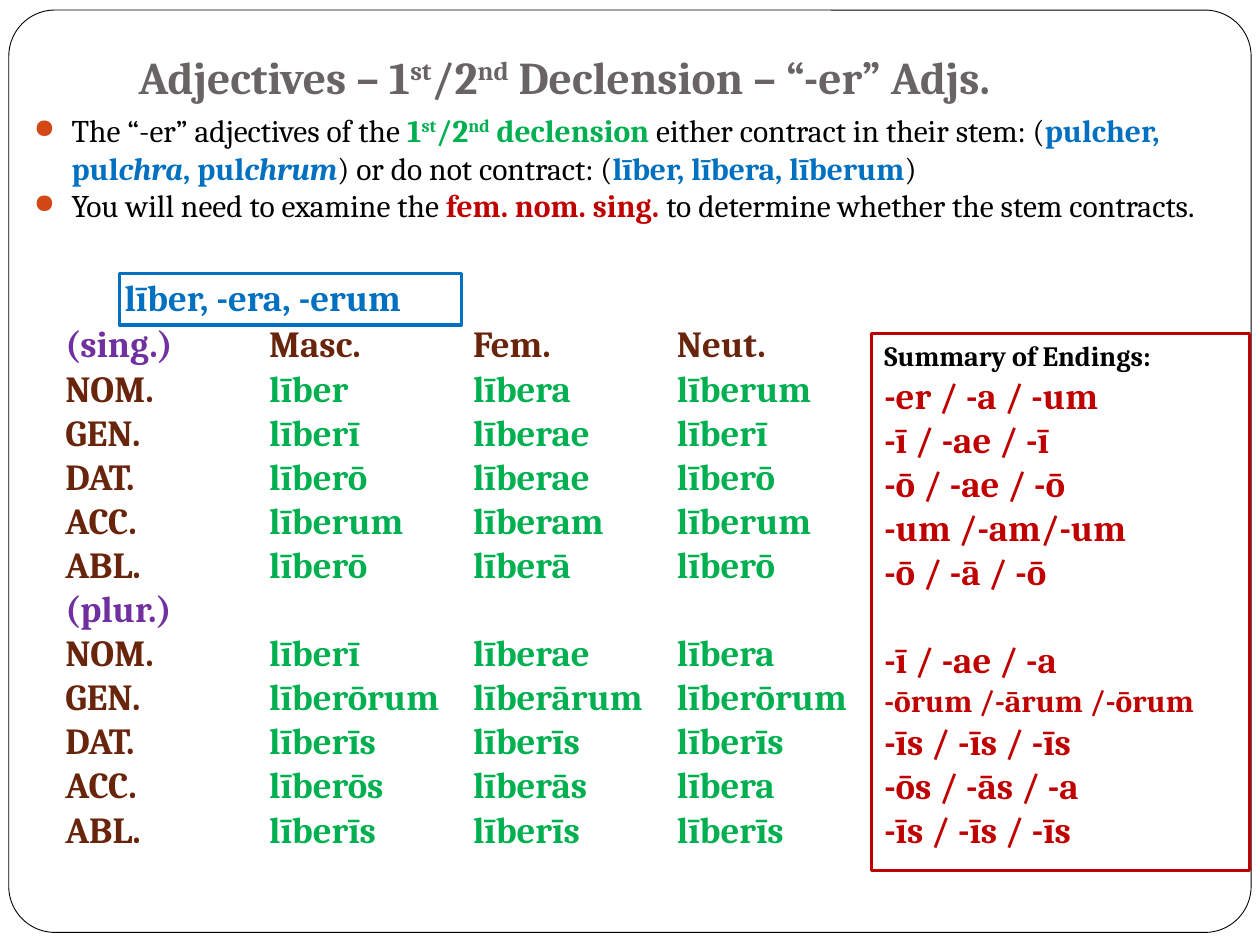
"""Build a slide on Latin first and second declension adjectives in -er."""
from dataclasses import dataclass, replace

import pptx
import pptx.dml.color
import pptx.enum.shapes
import pptx.enum.text
import pptx.oxml.ns
import pptx.shapes.base
import pptx.text.text
import pptx.util
from lxml import etree

Inches = pptx.util.Inches
Pt = pptx.util.Pt


@dataclass(frozen=True)
class Theme:
    font: str = "Cambria"
    title: str = "696464"
    ink: str = "000000"
    paper: str = "FFFFFF"
    bullet: str = "D34817"
    form: str = "00B050"
    example: str = "0070C0"
    ending: str = "C00000"
    label: str = "69240C"
    number: str = "7030A0"
    title_size: float = 26
    table_size: float = 21
    body_size: float = 18
    heading_size: float = 16
    row_gap: float = 25.2
    frame_line: float = 0.5
    box_line: float = 1.75


THEME = Theme()


@dataclass(frozen=True)
class Span:
    text: str
    color: str
    size: float = THEME.table_size
    bold: bool = True
    italic: bool = False
    raised: bool = False


@dataclass(frozen=True)
class Line:
    spans: tuple[Span, ...]
    gap: float = 0
    bullet: bool = False


@dataclass(frozen=True)
class Area:
    left: float
    top: float
    width: float
    height: float


def ordinals(style: Span, tail: str) -> tuple[Span, ...]:
    """Return the 1st/2nd spans followed by the tail."""
    parts = (("1", False), ("st", True), ("/2", False), ("nd", True), (tail, False))
    return tuple(replace(style, text=text, raised=raised) for text, raised in parts)


def place(shape: pptx.shapes.base.BaseShape, area: Area) -> None:
    """Move and size a shape."""
    shape.left, shape.top = Inches(area.left), Inches(area.top)
    shape.width, shape.height = Inches(area.width), Inches(area.height)


def add_bullet(para: pptx.text.text._Paragraph) -> None:
    """Give a paragraph a hanging round bullet."""
    props = para._p.get_or_add_pPr()
    props.set("marL", str(Inches(0.3)))
    props.set("indent", str(-Inches(0.3)))
    qn = pptx.oxml.ns.qn
    color = etree.SubElement(props, qn("a:buClr"))
    etree.SubElement(color, qn("a:srgbClr"), val=THEME.bullet)
    etree.SubElement(props, qn("a:buSzPct"), val="85000")
    etree.SubElement(props, qn("a:buChar"), char="●")


def write(frame: pptx.text.text.TextFrame, lines: list[Line]) -> None:
    """Fill a text frame run by run."""
    frame.word_wrap = True
    frame.auto_size = pptx.enum.text.MSO_AUTO_SIZE.NONE
    for index, line in enumerate(lines):
        para = frame.add_paragraph() if index else frame.paragraphs[0]
        para.alignment = pptx.enum.text.PP_ALIGN.LEFT
        para.space_before = Pt(line.gap)
        if line.bullet:
            add_bullet(para)
        for item in line.spans:
            span = para.add_run()
            span.text = item.text
            span.font.name = THEME.font
            span.font.size = Pt(item.size)
            span.font.bold = item.bold
            span.font.italic = item.italic
            span.font.color.rgb = pptx.dml.color.RGBColor.from_string(item.color)
            if item.raised:
                span._r.get_or_add_rPr().set("baseline", "30000")


def add_text(shapes, area: Area, lines: list[Line], columns: int = 1) -> None:
    """Add a text box, flowing its lines through equal columns."""
    box = shapes.add_textbox(0, 0, 0, 0)
    place(box, area)
    write(box.text_frame, lines)
    if columns > 1:
        body = box.text_frame._txBody.bodyPr
        body.set("numCol", str(columns))
        body.set("spcCol", "0")


def add_outline(shapes, kind, area: Area, color: str, width: float):
    """Add an unfilled outlined shape."""
    box = shapes.add_shape(kind, 0, 0, 0, 0)
    place(box, area)
    box.shadow.inherit = False
    box.fill.background()
    box.line.color.rgb = pptx.dml.color.RGBColor.from_string(color)
    box.line.width = Pt(width)
    return box


def add_framed_text(page, border: Area, area: Area, color: str, lines: list[Line]) -> None:
    """Group a text box with its rectangular border."""
    group = page.shapes.add_group_shape()
    kind = pptx.enum.shapes.MSO_SHAPE.RECTANGLE
    add_outline(group.shapes, kind, border, color, THEME.box_line)
    add_text(group.shapes, area, lines)


def column_lines(heading: str, singular: str, plural: str) -> list[Line]:
    """List one gender's heading and forms, leaving a row before the plural."""
    lines = [Line((Span(heading, THEME.label),))]
    lines += [Line((Span(form, THEME.form),)) for form in singular.split()]
    for index, form in enumerate(plural.split()):
        lines.append(Line((Span(form, THEME.form),), 0 if index else THEME.row_gap))
    return lines


def paradigm_lines() -> list[Line]:
    """List the case labels and the three genders in column order."""
    lines = []
    for number in ("(sing.)", "(plur.)"):
        lines.append(Line((Span(number, THEME.number),)))
        lines += [Line((Span(case, THEME.label),)) for case in "NOM. GEN. DAT. ACC. ABL.".split()]
    lines += column_lines("Masc.", "līber līberī līberō līberum līberō",
                          "līberī līberōrum līberīs līberōs līberīs")
    lines += column_lines("Fem.", "lībera līberae līberae līberam līberā",
                          "līberae līberārum līberīs līberās līberīs")
    lines += column_lines("Neut.", "līberum līberī līberō līberum līberō",
                          "lībera līberōrum līberīs lībera līberīs")
    return lines


def summary_lines() -> list[Line]:
    """List the endings under their heading."""
    ending = Span("", THEME.ending)
    singular = ("-er / -a / -um", "-ī / -ae / -ī", "-ō / -ae / -ō", "-um /-am/-um", "-ō / -ā / -ō")
    plural = ("-īs / -īs / -īs", "-ōs / -ās / -a", "-īs / -īs / -īs")
    long_ending = replace(ending, text="-ōrum /-ārum /-ōrum", size=THEME.body_size)
    return [
        Line((Span("Summary of Endings:", THEME.ink, THEME.heading_size),)),
        *(Line((replace(ending, text=text),)) for text in singular),
        Line((replace(ending, text="-ī / -ae / -a"),), THEME.row_gap),
        Line((long_ending,)),
        *(Line((replace(ending, text=text),)) for text in plural),
    ]


def rule_lines() -> list[Line]:
    """List the two bulleted rules."""
    def plain(text: str) -> Span:
        return Span(text, THEME.ink, THEME.body_size, bold=False)

    def strong(text: str, color: str = THEME.example, italic: bool = False) -> Span:
        return Span(text, color, THEME.body_size, italic=italic)

    contract = (plain("The “-er” adjectives of the "),
                *ordinals(strong("", THEME.form), " declension "),
                plain("either contract in their stem: ("),
                strong("pulcher, pul"), strong("chra", italic=True),
                strong(", pul"), strong("chrum", italic=True),
                plain(") or do not contract: ("), strong("līber, lībera, līberum"), plain(")"))
    examine = (plain("You will need to examine the "), strong("fem. nom. sing. ", THEME.ending),
               plain("to determine whether the stem contracts."))
    return [Line(contract, bullet=True), Line(examine, bullet=True)]


def main() -> None:
    """Build and save the deck."""
    deck = pptx.Presentation()
    deck.slide_width, deck.slide_height = Inches(10), Inches(7.5)
    page = deck.slides.add_slide(deck.slide_layouts[5])
    title = page.shapes.title
    place(title, Area(1, 0.3, 8.5, 0.62))
    style = Span("", THEME.title, THEME.title_size)
    heading = (replace(style, text="Adjectives – "), *ordinals(style, " Declension – “-er” Adjs."))
    write(title.text_frame, [Line(heading)])
    title.text_frame.vertical_anchor = pptx.enum.text.MSO_ANCHOR.BOTTOM
    title.text_frame.margin_bottom = Inches(0.1)

    frame = add_outline(page.shapes, pptx.enum.shapes.MSO_SHAPE.ROUNDED_RECTANGLE,
                        Area(0.07, 0.08, 9.86, 7.32), THEME.ink, THEME.frame_line)
    frame.adjustments[0] = 0.05
    frame.fill.solid()
    frame.fill.fore_color.rgb = pptx.dml.color.RGBColor.from_string(THEME.paper)
    title.element.addprevious(frame.element)

    add_text(page.shapes, Area(0.17, 0.83, 9.83, 1.42), rule_lines())
    add_text(page.shapes, Area(0.42, 2.5, 6.67, 4.42), paradigm_lines(), columns=4)
    add_framed_text(page, Area(6.92, 2.65, 3, 4.26), Area(6.92, 2.64, 3.25, 4.21),
                    THEME.ending, summary_lines())
    add_framed_text(page, Area(0.95, 2.17, 2.71, 0.41), Area(0.89, 2.13, 2.86, 0.45),
                    THEME.example, [Line((Span("līber, -era, -erum", THEME.example),))])
    deck.save("out.pptx")


if __name__ == "__main__":
    main()
